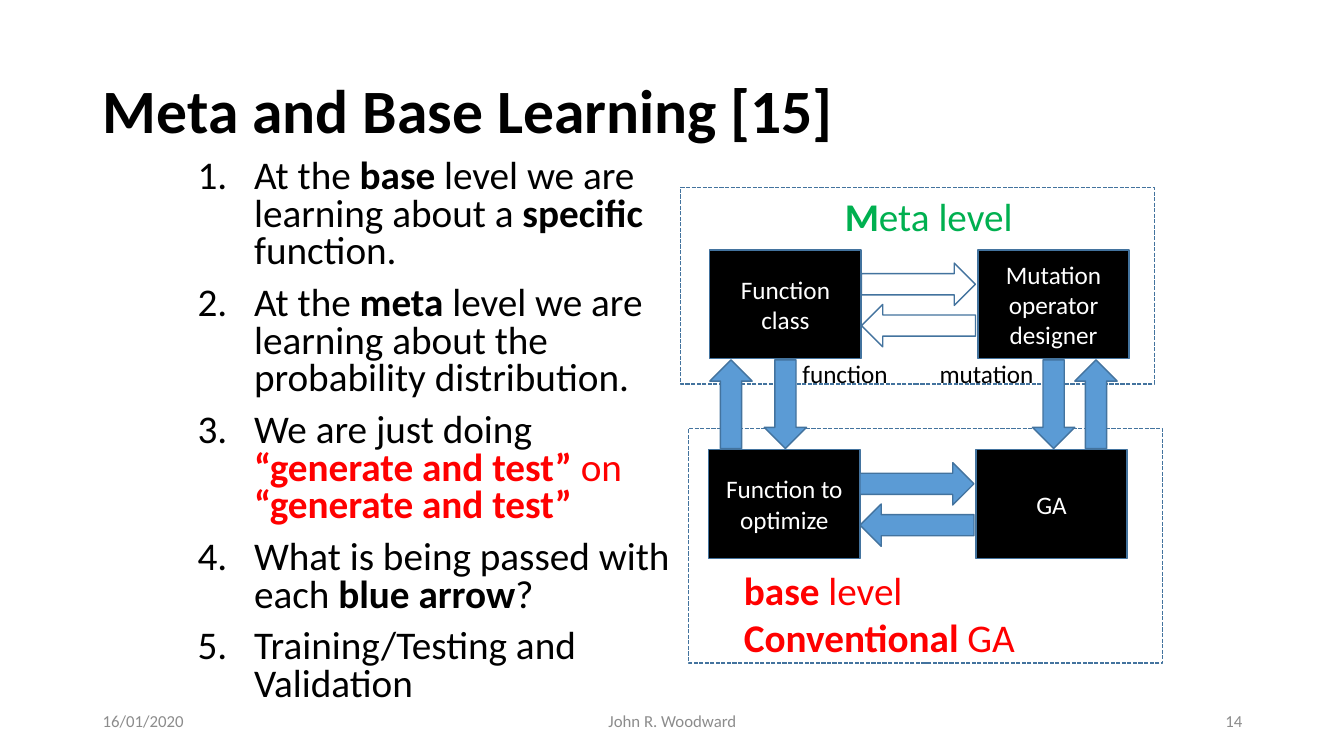
from dataclasses import dataclass

from lxml.etree import SubElement
from pptx import Presentation
from pptx.dml.color import RGBColor
from pptx.enum.dml import MSO_LINE
from pptx.enum.shapes import MSO_SHAPE
from pptx.enum.text import MSO_ANCHOR, MSO_AUTO_SIZE, PP_ALIGN
from pptx.oxml.ns import qn
from pptx.util import Inches, Pt


@dataclass(frozen=True)
class Theme:
    font: str = "Calibri"
    black: str = "000000"
    white: str = "FFFFFF"
    red: str = "FF0000"
    green: str = "00B050"
    grey: str = "8C8C8C"
    blue: str = "5B9BD5"
    outline: str = "43739E"
    title: int = 44
    body: int = 28
    label: int = 18
    footer: int = 12


THEME = Theme()
DOWN, LEFT, UP, RIGHT = 0, 90, 180, 270
ARROW_WIDTH = 0.42

POINTS = [
    [("At the ", False), ("base", True), (" level we are learning about a ", False),
     ("specific", True), (" function.", False)],
    [("At the ", False), ("meta", True),
     (" level we are learning about the probability distribution.", False)],
    [("We are just doing ", False), ("“generate and test” ", True, THEME.red),
     ("on ", False, THEME.red), ("“generate and test”", True, THEME.red)],
    [("What is being passed with each ", False), ("blue arrow", True), ("?", False)],
    [("Training/Testing and Validation", False)],
]


def apply(target, formats):
    for name, value in formats.items():
        setattr(target, name, value)


def write(frame, paragraphs, size, color=THEME.black, **para_formats):
    for index, spans in enumerate(paragraphs):
        para = frame.paragraphs[0] if index == 0 else frame.add_paragraph()
        apply(para, para_formats)
        for text, bold, *own_color in spans:
            span = para.add_run()
            span.text = text
            apply(span.font, {"name": THEME.font, "size": Pt(size), "bold": bold})
            span.font.color.rgb = RGBColor.from_string(own_color[0] if own_color else color)


def place(shape, box):
    apply(shape, dict(zip(("left", "top", "width", "height"), map(Inches, box))))


def add_text(page, box, paragraphs, size, color=THEME.black, wrap=True,
             anchor=MSO_ANCHOR.TOP, align=PP_ALIGN.LEFT):
    frame = page.shapes.add_textbox(*map(Inches, box)).text_frame
    apply(frame, {"word_wrap": wrap, "vertical_anchor": anchor})
    write(frame, paragraphs, size, color, alignment=align)


def add_block(page, kind, box, fill=None):
    shape = page.shapes.add_shape(kind, *map(Inches, box))
    shape.shadow.inherit = False
    if fill:
        shape.fill.solid()
        shape.fill.fore_color.rgb = RGBColor.from_string(fill)
    else:
        shape.fill.background()
    shape.line.color.rgb = RGBColor.from_string(THEME.outline)
    shape.line.width = Pt(1)
    return shape


def add_arrow(page, center_x, center_y, length, direction, fill):
    box = (center_x - ARROW_WIDTH / 2, center_y - length / 2, ARROW_WIDTH, length)
    add_block(page, MSO_SHAPE.DOWN_ARROW, box, fill).rotation = direction


def add_frame(page, box):
    add_block(page, MSO_SHAPE.RECTANGLE, box).line.dash_style = MSO_LINE.SQUARE_DOT


def add_title(page, box):
    title = page.shapes.title
    place(title, box)
    apply(title.text_frame, {"vertical_anchor": MSO_ANCHOR.MIDDLE,
                             "auto_size": MSO_AUTO_SIZE.NONE})
    write(title.text_frame, [[("Meta and Base Learning [15]", True)]], THEME.title,
          alignment=PP_ALIGN.LEFT, line_spacing=0.9)


def add_points(page, box):
    body = page.placeholders[1]
    place(body, box)
    body.text_frame.auto_size = MSO_AUTO_SIZE.NONE
    write(body.text_frame, POINTS, THEME.body, line_spacing=0.8, space_before=Pt(10))
    for para in body.text_frame.paragraphs:
        properties = para._p.get_or_add_pPr()
        properties.set("marL", str(Inches(0.56)))
        properties.set("indent", str(-Inches(0.56)))
        SubElement(properties, qn("a:buFont"), typeface=THEME.font)
        SubElement(properties, qn("a:buAutoNum"), type="arabicPeriod")


def add_level(page, box, names, arrow_fill):
    left, top, width, height = box
    node_width = 1.5
    for name, node_left in zip(names, (left, left + width - node_width)):
        node = add_block(page, MSO_SHAPE.RECTANGLE,
                         (node_left, top, node_width, height), THEME.black)
        node.text_frame.vertical_anchor = MSO_ANCHOR.MIDDLE
        write(node.text_frame, [[(name, False)]], THEME.label, THEME.white,
              alignment=PP_ALIGN.CENTER)
    for direction, offset in ((RIGHT, 0.34), (LEFT, 0.75)):
        add_arrow(page, left + width / 2 - 0.01, top + offset, 1.13, direction, arrow_fill)


def add_diagram(page, box):
    left, top, width, height = box
    frame_width = 4.7
    add_frame(page, (left, top, frame_width, 1.95))
    add_frame(page, (left + width - frame_width, top + 2.39, frame_width, height - 2.39))
    add_level(page, (left + 0.29, top + 0.62, 4.16, 1.08),
              ("Function class", "Mutation operator designer"), THEME.white)
    add_level(page, (left + 0.28, top + 2.6, 4.15, 1.08),
              ("Function to optimize", "GA"), THEME.blue)
    for offset, direction in ((0.5, UP), (1.04, DOWN), (3.7, DOWN), (4.12, UP)):
        add_arrow(page, left + offset, top + 2.15, 0.88, direction, THEME.blue)
    add_text(page, (left + 1.53, top, 1.88, 0.57),
             [[("M", True), ("eta level", False)]], THEME.body, THEME.green, wrap=False)
    add_text(page, (left + 0.53, top + 3.71, 3.92, 1.51),
             [[("base ", True), ("level", False)],
              [("Conventional", True), (" GA", False)]], THEME.body, THEME.red)
    for text, offset, label_width in (("function", 1.11, 1.06), ("mutation", 2.47, 1.14)):
        add_text(page, (left + offset, top + 1.65, label_width, 0.4),
                 [[(text, False)]], THEME.label, wrap=False)


def add_footer(page, box):
    left, top, width, height = box
    for text, offset, part_width, align in (
        ("16/01/2020", 0, 3, PP_ALIGN.LEFT),
        ("John R. Woodward", (width - 4.5) / 2, 4.5, PP_ALIGN.CENTER),
        ("14", width - 3, 3, PP_ALIGN.RIGHT),
    ):
        add_text(page, (left + offset, top, part_width, height), [[(text, False)]],
                 THEME.footer, THEME.grey, anchor=MSO_ANCHOR.MIDDLE, align=align)


def main():
    deck = Presentation()
    apply(deck, {"slide_width": Inches(13.33), "slide_height": Inches(7.5)})
    page = deck.slides.add_slide(deck.slide_layouts[1])
    add_title(page, (0.92, 0.4, 11.5, 1.45))
    add_points(page, (1.86, 1.53, 4.89, 5.76))
    add_diagram(page, (6.75, 1.86, 4.78, 4.72))
    add_footer(page, (0.92, 6.95, 11.5, 0.4))
    deck.save("out.pptx")


if __name__ == "__main__":
    main()
